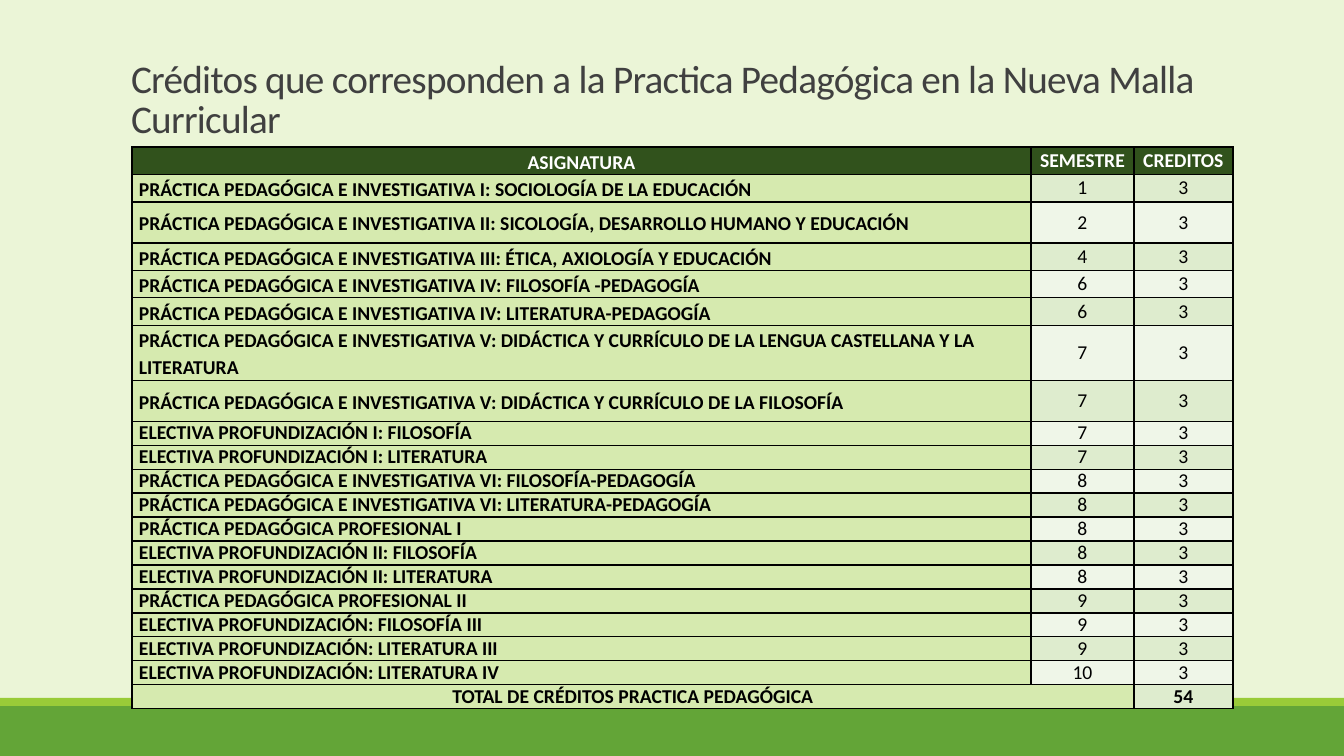
from lxml import etree
from pptx import Presentation
from pptx.dml.color import RGBColor
from pptx.enum.shapes import MSO_SHAPE
from pptx.enum.text import MSO_ANCHOR, MSO_AUTO_SIZE, PP_ALIGN
from pptx.oxml import parse_xml
from pptx.util import Pt

RECT = MSO_SHAPE.RECTANGLE
MIDDLE, BOTTOM = MSO_ANCHOR.MIDDLE, MSO_ANCHOR.BOTTOM
LEFT, CENTER = PP_ALIGN.LEFT, PP_ALIGN.CENTER
NO_FIT = MSO_AUTO_SIZE.NONE
FONT = "Calibri"
NS = "http://schemas.openxmlformats.org/drawingml/2006/main"
SCALE = 914400 / 100.8
COLORS = {
    "back": "EBF5D7", "bar": "63A537", "stripe": "99CB38", "title": "404040",
    "head": "31521C", "name": "D6EAAF", "odd": "DEECCE", "even": "EFF6E8",
    "white": "FFFFFF", "black": "000000",
}
COLS = [899, 103, 99]
ROW, TALL = 24, 41
TALL_ROWS = {2, 6, 7}
LOOSE_ROWS = 8  # the header and first seven courses have wider line spacing

PRACTICE = "PRÁCTICA PEDAGÓGICA E INVESTIGATIVA "
ELECTIVE = "ELECTIVA PROFUNDIZACIÓN"
COURSES = [
    (PRACTICE + "I: SOCIOLOGÍA DE LA EDUCACIÓN", 1),
    (PRACTICE + "II: SICOLOGÍA, DESARROLLO HUMANO Y EDUCACIÓN", 2),
    (PRACTICE + "III: ÉTICA, AXIOLOGÍA Y EDUCACIÓN", 4),
    (PRACTICE + "IV: FILOSOFÍA -PEDAGOGÍA", 6),
    (PRACTICE + "IV: LITERATURA-PEDAGOGÍA", 6),
    (PRACTICE + "V: DIDÁCTICA Y CURRÍCULO DE LA LENGUA CASTELLANA Y LA LITERATURA", 7),
    (PRACTICE + "V: DIDÁCTICA Y CURRÍCULO DE LA FILOSOFÍA", 7),
    (ELECTIVE + " I: FILOSOFÍA", 7),
    (ELECTIVE + " I: LITERATURA", 7),
    (PRACTICE + "VI: FILOSOFÍA-PEDAGOGÍA", 8),
    (PRACTICE + "VI: LITERATURA-PEDAGOGÍA", 8),
    ("PRÁCTICA PEDAGÓGICA PROFESIONAL I", 8),
    (ELECTIVE + " II: FILOSOFÍA", 8),
    (ELECTIVE + " II: LITERATURA", 8),
    ("PRÁCTICA PEDAGÓGICA PROFESIONAL II", 9),
    (ELECTIVE + ": FILOSOFÍA III", 9),
    (ELECTIVE + ": LITERATURA III", 9),
    (ELECTIVE + ": LITERATURA IV", 10),
]
CREDITS = 3
ROWS = [("ASIGNATURA", "SEMESTRE", "CREDITOS")]
ROWS += [(name, term, CREDITS) for name, term in COURSES]
ROWS.append(("TOTAL DE CRÉDITOS PRACTICA PEDAGÓGICA", "", CREDITS * len(COURSES)))


def px(*sizes):
    return [round(size * SCALE) for size in sizes]


def color(key):
    return RGBColor.from_string(COLORS[key])


deck = Presentation()
deck.slide_width, deck.slide_height = px(1344, 756)
slide = deck.slides.add_slide(deck.slide_layouts[5])
slide.background.fill.solid()
slide.background.fill.fore_color.rgb = color("back")

# Title
title = slide.shapes.title
title.left, title.top, title.width, title.height = px(121, 54, 1109, 93)
frame = title.text_frame
frame.text = "Créditos que corresponden a la Practica Pedagógica en la Nueva Malla Curricular"
frame.word_wrap = True
frame.auto_size = NO_FIT
frame.vertical_anchor = BOTTOM
para = frame.paragraphs[0]
para.alignment = LEFT
para.line_spacing = 0.85
para.font.name, para.font.size = FONT, Pt(28)
para.font.color.rgb = color("title")
para.runs[0].font._element.set("spc", "-50")

# Bottom bars
for key, top, height in [("bar", 706, 50), ("stripe", 698, 8)]:
    bar = slide.shapes.add_shape(RECT, *px(0, top, 1344, height))
    bar.shadow.inherit = False
    bar.fill.solid()
    bar.fill.fore_color.rgb = color(key)
    bar.line.fill.background()

# Credits table
last = len(ROWS) - 1
heights = [TALL if r in TALL_ROWS else ROW for r in range(len(ROWS))]
table = slide.shapes.add_table(
    len(ROWS), len(COLS), *px(132, 147, sum(COLS), sum(heights))).table
table.first_row = table.horz_banding = False
for col, width in zip(table.columns, px(*COLS)):
    col.width = width
for row, height in zip(table.rows, px(*heights)):
    row.height = height
table.cell(last, 0).merge(table.cell(last, 1))

for r, values in enumerate(ROWS):
    for c, value in enumerate(values):
        cell = table.cell(r, c)
        cell.text = str(value)
        cell.vertical_anchor = MIDDLE
        cell.margin_left, cell.margin_right = px(7, 7)
        cell.margin_top = cell.margin_bottom = 0
        band = "odd" if r % 2 else "even"
        fill = "head" if r == 0 else "name" if c == 0 else band
        cell.fill.solid()
        cell.fill.fore_color.rgb = color(fill)

        para = cell.text_frame.paragraphs[0]
        para.alignment = LEFT if c == 0 and 0 < r < last else CENTER
        if c == 0 and r < LOOSE_ROWS:
            para.line_spacing = 1.15
            para.space_after = Pt(10)
        para.font.name, para.font.size = FONT, Pt(14)
        para.font.bold = c == 0 or r in (0, last)
        para.font.color.rgb = color("white" if r == 0 else "black")

        props = cell._tc.get_or_add_tcPr()
        for i, side in enumerate(("lnL", "lnR", "lnT", "lnB")):
            edge = parse_xml(f'<a:{side} xmlns:a="{NS}" w="12700"/>')
            paint = etree.SubElement(edge, f"{{{NS}}}solidFill")
            etree.SubElement(paint, f"{{{NS}}}srgbClr", val=COLORS["black"])
            props.insert(i, edge)

deck.save("out.pptx")
